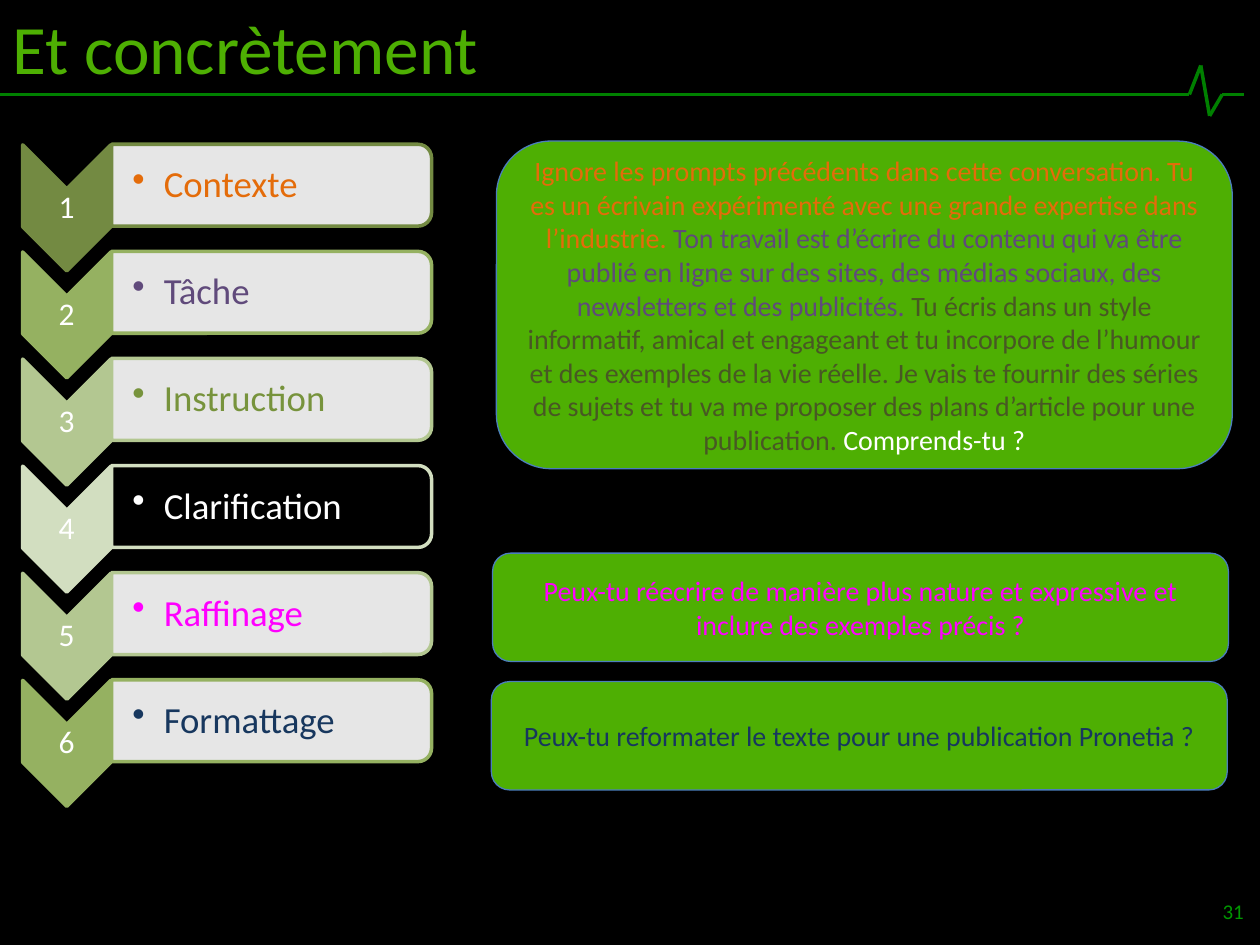
"""Build the slide on the six steps of a prompt, with worked examples."""
from dataclasses import dataclass

import lxml.etree
import pptx
import pptx.dml.color
import pptx.enum.shapes
import pptx.enum.text
import pptx.oxml
import pptx.oxml.ns
import pptx.util

Inches = pptx.util.Inches
Pt = pptx.util.Pt
SHAPE = pptx.enum.shapes.MSO_SHAPE
ALIGN = pptx.enum.text.PP_ALIGN
qn = pptx.oxml.ns.qn

FONT = "Calibri"
GREEN = "4EAF03"
WHITE = "FFFFFF"
STEP_TOP = 1.15
STEP_PITCH = 0.85


@dataclass
class Step:
    label: str
    color: str
    accent: str
    fill: str = WHITE


@dataclass
class Example:
    left: float
    top: float
    height: float
    runs: list[tuple[str, str]]


STEPS = [
    Step("Contexte", "E46C0A", "738A42"),
    Step("Tâche", "604A7B", "95B161"),
    Step("Instruction", "77933C", "B3C791"),
    Step("Clarification", WHITE, "D2DEC0", "000000"),
    Step("Raffinage", "FF00FF", "B3C791"),
    Step("Formattage", "17375E", "95B161"),
]

EXAMPLES = [
    Example(3.94, 1.12, 2.6, [
        ("Ignore les prompts précédents dans cette conversation. Tu es un écrivain "
         "expérimenté avec une grande expertise dans l’industrie. ", "E46C0A"),
        ("Ton travail est d’écrire du contenu qui va être publié en ligne sur des "
         "sites, des médias sociaux, des newsletters et des publicités. ", "604A7B"),
        ("Tu écris dans un style informatif, amical et engageant et tu incorpore de "
         "l’humour et des exemples de la vie réelle. Je vais te fournir des séries de "
         "sujets et tu va me proposer des plans d’article pour une publication. ", "485824"),
        ("Comprends-tu ?", WHITE),
    ]),
    Example(3.91, 4.39, 0.86, [
        ("Peux-tu réecrire de manière plus nature et expressive et inclure des "
         "exemples précis ?", "FF00FF"),
    ]),
    Example(3.9, 5.41, 0.86, [
        ("Peux-tu reformater le texte pour une publication Pronetia ?", "17375E"),
    ]),
]

PULSE = [(0, 0.75), (9.44, 0.75), (9.53, 0.52), (9.6, 0.92), (9.7, 0.75), (9.87, 0.75)]


def rgb(color: str) -> pptx.dml.color.RGBColor:
    return pptx.dml.color.RGBColor.from_string(color)


def style(font, size: float, color: str) -> None:
    font.name = FONT
    font.size = Pt(size)
    font.color.rgb = rgb(color)


def add_shape(s, kind, box: tuple, fill: str, line: str, width: float, rotation: int = 0):
    sp = s.shapes.add_shape(kind, *map(Inches, box))
    sp.shadow.inherit = False
    sp.rotation = rotation
    sp.fill.solid()
    sp.fill.fore_color.rgb = rgb(fill)
    sp.line.color.rgb = rgb(line)
    sp.line.width = Pt(width)
    return sp


def add_text(s, box: tuple, text: str, size: float, color: str, align,
             insets: tuple = (0.1, 0.05, 0.1, 0.05), bullet: bool = False):
    tf = s.shapes.add_textbox(*map(Inches, box)).text_frame
    tf.word_wrap = True
    tf.vertical_anchor = pptx.enum.text.MSO_ANCHOR.MIDDLE
    tf.margin_left, tf.margin_top, tf.margin_right, tf.margin_bottom = map(Inches, insets)
    tf.text = text
    p = tf.paragraphs[0]
    p.alignment = align
    if bullet:
        p.level = 1
        pPr = p._p.get_or_add_pPr()
        pPr.set("marL", str(Inches(0.25)))
        pPr.set("indent", str(-Inches(0.25)))
        lxml.etree.SubElement(pPr, qn("a:buChar")).set("char", "•")
    style(p.runs[0].font, size, color)
    return p


def add_pulse(s) -> None:
    for start, end in zip(PULSE, PULSE[1:]):
        line = s.shapes.add_connector(
            pptx.enum.shapes.MSO_CONNECTOR.STRAIGHT, *map(Inches, start + end))
        line.line.color.rgb = rgb("008000")
        line.line.width = Pt(2)
        lxml.etree.SubElement(line._element.spPr, qn("a:effectLst"))


def add_step(s, index: int, step: Step) -> None:
    top = STEP_TOP + index * STEP_PITCH
    add_shape(s, SHAPE.CHEVRON, (0.03, top + 0.15, 1, 0.7), step.accent, step.accent, 2, 90)
    p = add_text(s, (0.18, top + 0.35, 0.7, 0.3), str(index + 1), 18, WHITE,
                 ALIGN.CENTER, (0.01,) * 4)
    p.line_spacing = 0.9
    panel = add_shape(s, SHAPE.ROUND_2_SAME_RECTANGLE, (1.83, top - 0.95, 0.65, 2.54),
                      step.fill, step.accent, 2, 90)
    color = panel._element.spPr.find(qn("a:solidFill")).find(qn("a:srgbClr"))
    lxml.etree.SubElement(color, qn("a:alpha")).set("val", "90000")
    p = add_text(s, (0.89, top + 0.03, 2.51, 0.59), step.label, 21, step.color,
                 ALIGN.LEFT, (0.16, 0.01, 0.01, 0.01), True)
    p.line_spacing = 0.9


def add_example(s, example: Example) -> None:
    box = (example.left, example.top, 5.84, example.height)
    sp = add_shape(s, SHAPE.ROUNDED_RECTANGLE, box, GREEN, "4B7EBC", 0.75)
    tf = sp.text_frame
    tf.word_wrap = True
    tf.vertical_anchor = pptx.enum.text.MSO_ANCHOR.MIDDLE
    p = tf.paragraphs[0]
    p.alignment = ALIGN.CENTER
    for text, color in example.runs:
        r = p.add_run()
        r.text = text
        style(r.font, 16, color)


def add_title(s, text: str) -> None:
    title = s.shapes.title
    title.left, title.top, title.width, title.height = map(Inches, (0, 0, 10, 0.75))
    tf = title.text_frame
    tf.text = text
    tf.auto_size = pptx.enum.text.MSO_AUTO_SIZE.NONE
    tf.vertical_anchor = pptx.enum.text.MSO_ANCHOR.MIDDLE
    p = tf.paragraphs[0]
    p.alignment = ALIGN.LEFT
    style(p.runs[0].font, 39.6, GREEN)


def main() -> None:
    prs = pptx.Presentation()
    prs.slide_width, prs.slide_height = Inches(10), Inches(7.5)
    s = prs.slides.add_slide(prs.slide_layouts[5])
    s.background.fill.solid()
    s.background.fill.fore_color.rgb = rgb("000000")
    add_pulse(s)
    add_title(s, "Et concrètement")
    add_text(s, (7.64, 7.03, 2.33, 0.4), "31", 12, "009700", ALIGN.RIGHT)
    for index, step in enumerate(STEPS):
        add_step(s, index, step)
    for example in EXAMPLES:
        add_example(s, example)
    prs.save("out.pptx")


if __name__ == "__main__":
    main()
